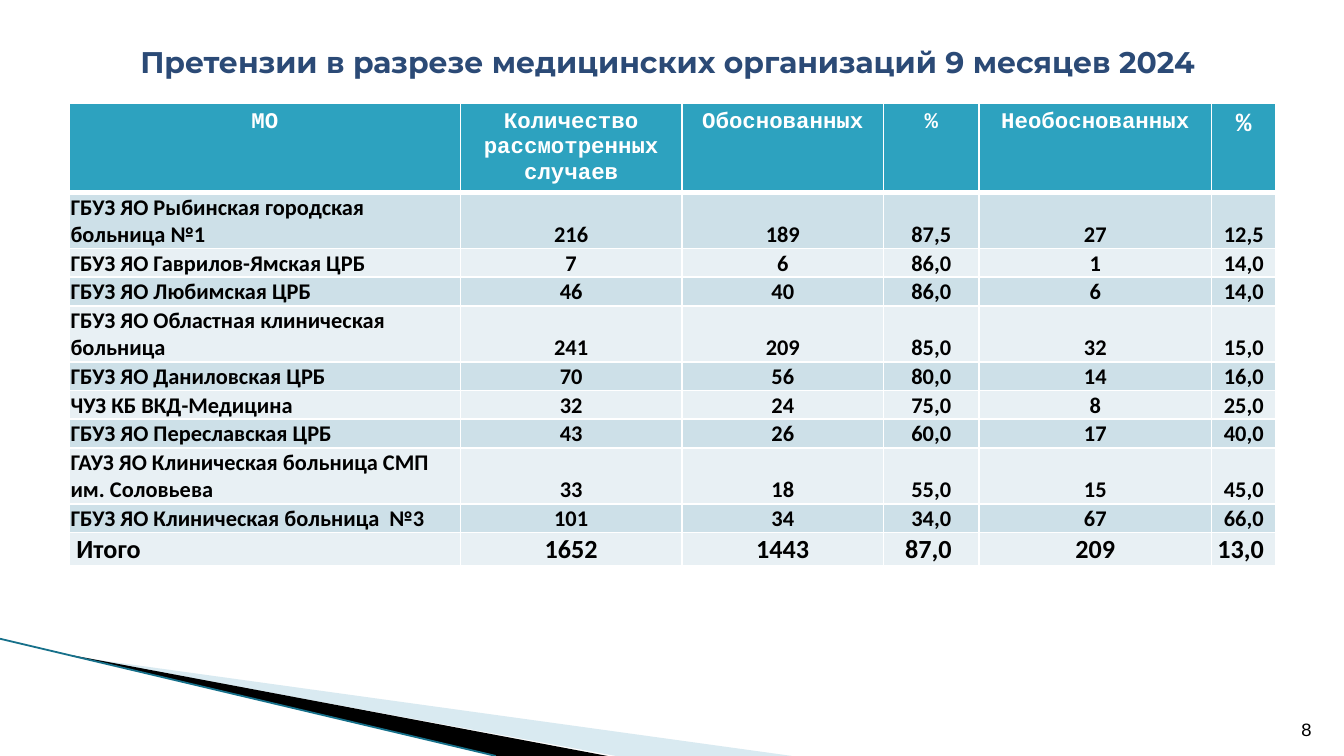
from collections import namedtuple

from lxml import etree
from pptx import Presentation
from pptx.dml.color import RGBColor
from pptx.enum.shapes import MSO_CONNECTOR
from pptx.enum.text import MSO_ANCHOR, MSO_AUTO_SIZE, PP_ALIGN
from pptx.oxml.ns import qn
from pptx.util import Inches, Pt

LEFT, CENTER, RIGHT = PP_ALIGN.LEFT, PP_ALIGN.CENTER, PP_ALIGN.RIGHT
MIDDLE, BOTTOM = MSO_ANCHOR.MIDDLE, MSO_ANCHOR.BOTTOM
STRAIGHT = MSO_CONNECTOR.STRAIGHT
NO_AUTOFIT = MSO_AUTO_SIZE.NONE

SLIDE_WIDTH = Inches(10)
SLIDE_HEIGHT = SLIDE_WIDTH * 9 // 16
COLORS = {
    "title": "2B4A76",
    "header": "2DA2BF",
    "odd_row": "CDE0E8",
    "even_row": "E8F0F4",
    "white": "FFFFFF",
    "black": "000000",
    "pale_wedge": "A0CBDC",
    "edge": "16708A",
}
FORMATS = {
    "title": {"name": "Montserrat", "size": Pt(16), "bold": True},
    "header": {"name": "Courier New", "size": Pt(12), "bold": True},
    "body": {"name": "Calibri", "size": Pt(12), "bold": True},
    "number": {"name": "Courier New", "size": Pt(10), "bold": False},
}
CELL_MARGINS = {
    "margin_left": Inches(0.01),
    "margin_right": Inches(0.01),
    "margin_top": Inches(0.01),
    "margin_bottom": 0,
}
COLUMN_WIDTHS = [2.91, 1.65, 1.5, 0.71, 1.73, 0.48]
ROW_HEIGHTS = [0.63, 0.4, 0.16, 0.2, 0.36, 0.15, 0.11, 0.15, 0.35, 0.21, 0.24]
HEADER = ["МО", "Количество рассмотренных случаев", "Обоснованных", "%", "Необоснованных", "%"]
CLAIMS = [
    ["ГБУЗ ЯО Рыбинская городская больница №1", "216", "189", "87,5", "27", "12,5"],
    ["ГБУЗ ЯО Гаврилов-Ямская ЦРБ", "7", "6", "86,0", "1", "14,0"],
    ["ГБУЗ ЯО Любимская ЦРБ", "46", "40", "86,0", "6", "14,0"],
    ["ГБУЗ ЯО Областная клиническая больница", "241", "209", "85,0", "32", "15,0"],
    ["ГБУЗ ЯО Даниловская ЦРБ", "70", "56", "80,0", "14", "16,0"],
    ["ЧУЗ КБ ВКД-Медицина", "32", "24", "75,0", "8", "25,0"],
    ["ГБУЗ ЯО Переславская ЦРБ", "43", "26", "60,0", "17", "40,0"],
    ["ГАУЗ ЯО Клиническая больница СМП им. Соловьева", "33", "18", "55,0", "15", "45,0"],
    ["ГБУЗ ЯО Клиническая больница  №3", "101", "34", "34,0", "67", "66,0"],
    [" Итого", "1652", "1443", "87,0 ", "209", "13,0 "],
]

Box = namedtuple("Box", "left top width height")


def share(box, left, top, width, height):
    """Return the part of a box given by shares of its size."""
    return Box(
        int(box.left + left * box.width),
        int(box.top + top * box.height),
        int(width * box.width),
        int(height * box.height),
    )


def set_values(target, values):
    """Set each attribute of the target from a dict."""
    for name, value in values.items():
        setattr(target, name, value)


def write_text(text_frame, text, style, color, alignment, **changes):
    """Write one formatted paragraph into a text frame."""
    paragraph = text_frame.paragraphs[0]
    paragraph.alignment = alignment
    run = paragraph.add_run()
    run.text = text
    set_values(run.font, {**FORMATS[style], **changes})
    run.font.color.rgb = RGBColor.from_string(COLORS[color])


def paint(shape_or_cell, color):
    """Fill a shape or cell with a solid named colour."""
    shape_or_cell.fill.solid()
    shape_or_cell.fill.fore_color.rgb = RGBColor.from_string(COLORS[color])


def add_wedge(slide, box, points, color, opacity=None):
    """Draw a filled outline through points given as shares of the box."""
    corners = [share(box, x, y, 0, 0)[:2] for x, y in points]
    builder = slide.shapes.build_freeform(*corners[0], scale=1.0)
    builder.add_line_segments(corners[1:], close=True)
    shape = builder.convert_to_shape()
    shape.shadow.inherit = False
    paint(shape, color)
    shape.line.fill.background()
    if opacity:
        color_element = shape.fill._xPr.find(qn("a:solidFill"))[0]
        etree.SubElement(color_element, qn("a:alpha"), val=str(opacity * 1000))


def add_corner(slide, box):
    """Draw the two wedges and the thin edge in the lower left corner."""
    add_wedge(slide, box, [(0.09, 0.15), (0.99, 1), (0.77, 1)], "pale_wedge", 40)
    add_wedge(slide, box, [(0.09, 0.14), (0.76, 1), (0.62, 1)], "black")
    start, end = share(box, 0, 0, 0, 0), share(box, 0.62, 1, 0, 0)
    edge = slide.shapes.add_connector(STRAIGHT, *start[:2], *end[:2])
    edge.line.width = Pt(0.95)
    edge.line.color.rgb = RGBColor.from_string(COLORS["edge"])
    etree.SubElement(edge._element.spPr, qn("a:effectLst"))


def add_title(slide, box, text):
    """Place and format the title placeholder."""
    title = slide.shapes.title
    set_values(title, box._asdict())
    set_values(title.text_frame, {
        "word_wrap": True, "auto_size": NO_AUTOFIT, "vertical_anchor": MIDDLE,
    })
    write_text(title.text_frame, text, "title", "title", CENTER)


def add_borders(cell, widths):
    """Give a cell white borders, with widths in points by side."""
    properties = cell._tc.get_or_add_tcPr()
    for side, width in widths.items():
        line = etree.SubElement(properties, qn(f"a:ln{side}"), w=str(Pt(width)))
        fill = etree.SubElement(line, qn("a:solidFill"))
        etree.SubElement(fill, qn("a:srgbClr"), val=COLORS["white"])


def add_claims_table(slide, box):
    """Build the banded table of claims with its header and total."""
    rows = [HEADER, *CLAIMS]
    table = slide.shapes.add_table(len(rows), len(HEADER), *box).table
    for column, width in zip(table.columns, COLUMN_WIDTHS):
        column.width = int(box.width * width / sum(COLUMN_WIDTHS))
    for row, height in zip(table.rows, ROW_HEIGHTS):
        row.height = Inches(height)
    for row_index, values in enumerate(rows):
        is_header = row_index == 0
        is_total = row_index == len(rows) - 1
        band = "odd_row" if row_index % 2 else "even_row"
        for column_index, value in enumerate(values):
            cell = table.cell(row_index, column_index)
            is_last = column_index == len(values) - 1
            if not is_header:
                set_values(cell, {**CELL_MARGINS, "vertical_anchor": BOTTOM})
            add_borders(cell, {
                "L": 1, "R": 1,
                "T": 3 if row_index == 1 else 1,
                "B": 3 if is_header else 1,
            })
            paint(cell, "header" if is_header else band)
            write_text(
                cell.text_frame, value,
                "header" if is_header else "body",
                "white" if is_header else "black",
                CENTER if is_header or column_index else LEFT,
                size=Pt(14 if is_total or (is_header and is_last) else 12),
            )


def add_page_number(slide, box, number):
    """Write the page number at the lower right."""
    text_frame = slide.shapes.add_textbox(*box).text_frame
    set_values(text_frame, {"word_wrap": True, "vertical_anchor": BOTTOM})
    write_text(text_frame, number, "number", "black", RIGHT)


def main():
    """Build the claims slide and save it."""
    presentation = Presentation()
    set_values(presentation, {"slide_width": SLIDE_WIDTH, "slide_height": SLIDE_HEIGHT})
    slide = presentation.slides.add_slide(presentation.slide_layouts[5])
    page = Box(0, 0, SLIDE_WIDTH, SLIDE_HEIGHT)
    add_corner(slide, share(page, 0, 0.845, 0.595, 0.155))
    add_title(slide, share(page, 0.05, 0.041, 0.9, 0.082),
              "Претензии в разрезе медицинских организаций 9 месяцев 2024 ")
    add_claims_table(slide, share(page, 0.0515, 0.1365, 0.898, 0.61))
    add_page_number(slide, share(page, 0.946, 0.935, 0.04, 0.053), "8")
    presentation.save("out.pptx")


if __name__ == "__main__":
    main()
